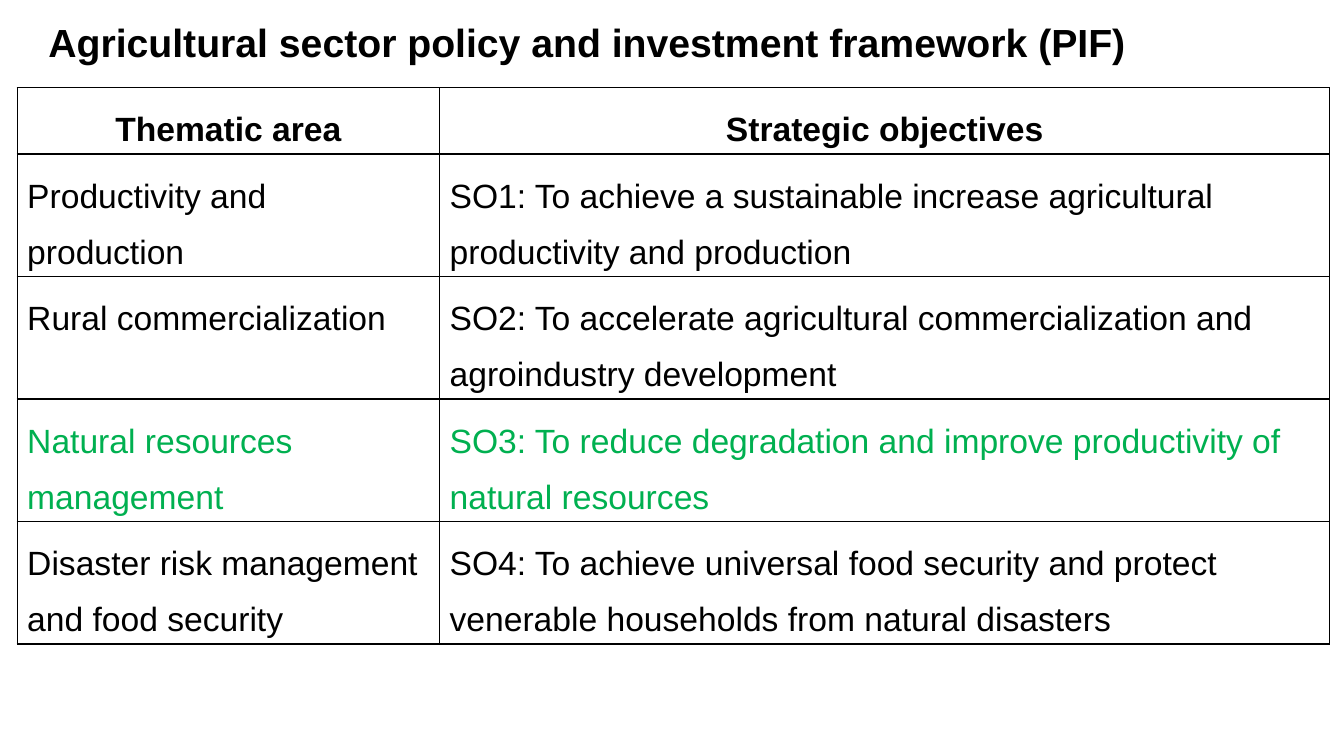
"""Build the slide on the agricultural policy and investment framework."""
from dataclasses import dataclass

from lxml import etree
from pptx import Presentation
from pptx.dml.color import RGBColor
from pptx.enum.text import MSO_ANCHOR, PP_ALIGN
from pptx.oxml.ns import qn
from pptx.util import Inches, Pt

LEFT, CENTER = PP_ALIGN.LEFT, PP_ALIGN.CENTER
MIDDLE = MSO_ANCHOR.MIDDLE
BLACK, GREEN = "000000", "00B050"
COLS = (4.19, 8.83)


@dataclass
class Row:
    """One table row with its format."""
    area: str
    goal: str
    height: float = 0.82
    color: str = BLACK
    bold: bool = False
    align: PP_ALIGN = LEFT


ROWS = [
    Row("Thematic area", "Strategic objectives", 0.48, bold=True, align=CENTER),
    Row("Productivity and production",
        "SO1: To achieve a sustainable increase agricultural productivity and production"),
    Row("Rural commercialization",
        "SO2: To accelerate agricultural commercialization and agroindustry development"),
    Row("Natural resources management",
        "SO3: To reduce degradation and improve productivity of natural resources",
        0.48, color=GREEN),
    Row("Disaster risk management and food security",
        "SO4: To achieve universal food security and protect venerable households "
        "from natural disasters"),
]


def paint(target, color: str) -> None:
    """Set a colour from a hex string."""
    target.rgb = RGBColor.from_string(color)


def write(frame, text: str, *, size: float = 24, color: str = BLACK,
          bold: bool = False, align: PP_ALIGN = LEFT, space: float = 1.5) -> None:
    """Put formatted text in a text frame."""
    para = frame.paragraphs[0]
    para.alignment = align
    para.line_spacing = space
    run = para.add_run()
    run.text = text
    run.font.name = "Arial"
    run.font.size = Pt(size)
    run.font.bold = bold
    paint(run.font.color, color)


def frame_cell(cell) -> None:
    """Give a cell thin black borders and no fill."""
    props = cell._tc.get_or_add_tcPr()
    for side in ("lnL", "lnR", "lnT", "lnB"):
        line = etree.SubElement(props, qn(f"a:{side}"), w=str(Pt(1)))
        fill = etree.SubElement(line, qn("a:solidFill"))
        etree.SubElement(fill, qn("a:srgbClr"), val=BLACK)
    cell.fill.background()


def add_title(slide, text: str) -> None:
    """Place and fill the title."""
    title = slide.shapes.title
    title.left, title.top = Inches(0.38), Inches(0.14)
    title.width, title.height = Inches(12.54), Inches(0.6)
    title.text_frame.word_wrap = True
    title.text_frame.vertical_anchor = MIDDLE
    write(title.text_frame, text, size=28, bold=True, space=0.9)


def add_grid(slide, rows: list[Row]) -> None:
    """Draw the table of themes and objectives."""
    shape = slide.shapes.add_table(
        len(rows), len(COLS), Inches(0.17), Inches(0.87), Inches(sum(COLS)), Inches(5.53))
    table = shape.table
    table.first_row = table.horz_banding = False
    for col, width in zip(table.columns, COLS):
        col.width = Inches(width)
    for line, row in zip(table.rows, rows):
        line.height = Inches(row.height)
        for cell, text in zip(line.cells, (row.area, row.goal)):
            frame_cell(cell)
            write(cell.text_frame, text, color=row.color, bold=row.bold, align=row.align)
    shape.height = Inches(5.53)


def main() -> None:
    """Build and save the deck."""
    deck = Presentation()
    deck.slide_width, deck.slide_height = Inches(13.33), Inches(7.5)
    slide = deck.slides.add_slide(deck.slide_layouts[5])
    add_title(slide, "Agricultural sector policy and investment framework (PIF)")
    add_grid(slide, ROWS)
    deck.save("out.pptx")


if __name__ == "__main__":
    main()
